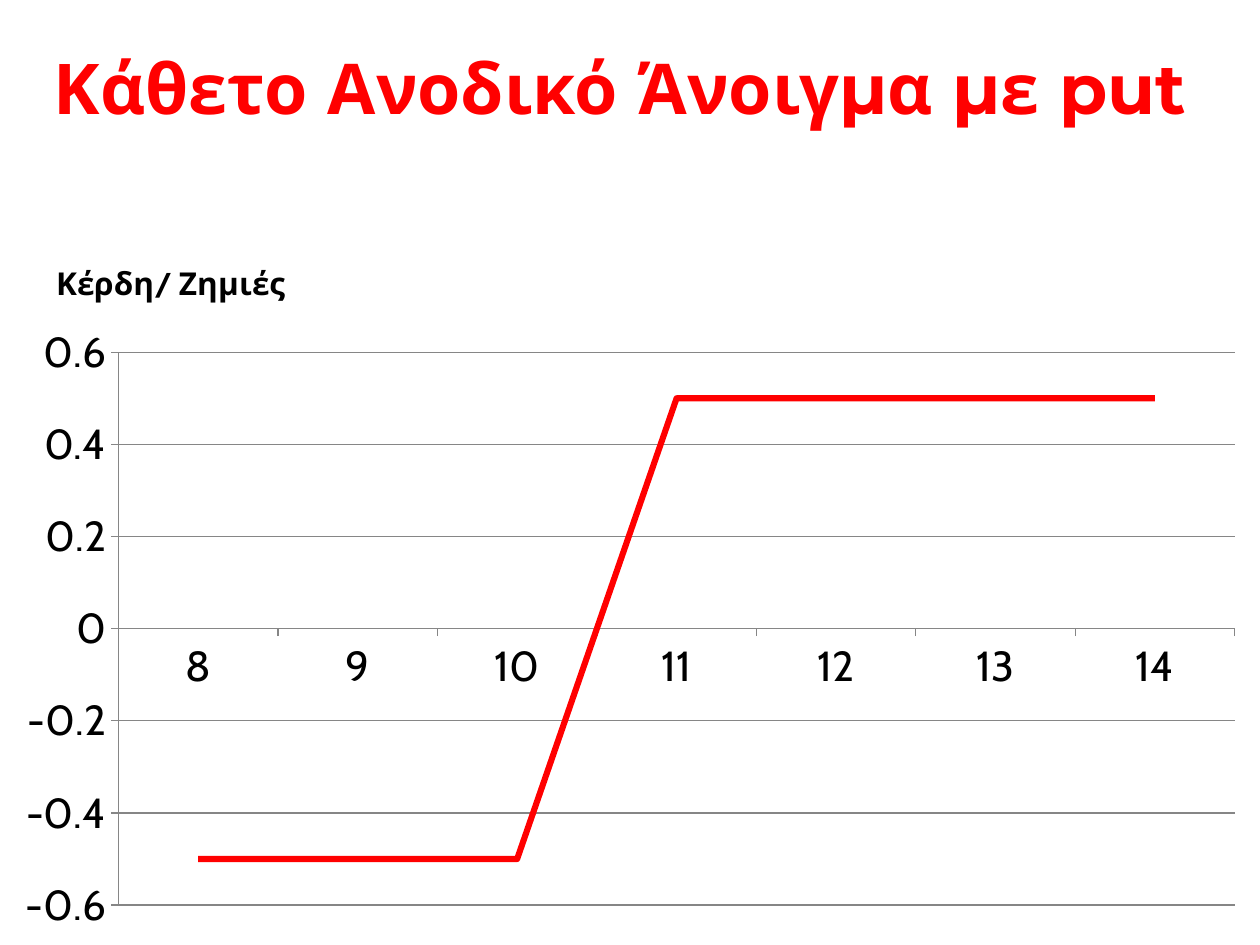
import pptx
import pptx.util
import pptx.chart.data
import pptx.dml.color
import pptx.enum.chart
import pptx.enum.text
import pptx.oxml

Inches = pptx.util.Inches
Pt = pptx.util.Pt

TITLE = "Κάθετο Ανοδικό Άνοιγμα με put "
SERIES_NAME = "Κέρδη/ Ζημιές"
PRICES = ["8", "9", "10", "11", "12", "13", "14"]
PROFITS = [-0.5, -0.5, -0.5, 0.5, 0.5, 0.5, 0.5]
COLORS = {"red": "FF0000", "black": "000000", "grid": "868686"}
TITLE_LAYOUT = {"x": 0.04, "y": 0.03}
PLOT_LAYOUT = {"x": 0.094, "y": 0.166, "w": 0.886, "h": 0.778}


def color(name):
    return pptx.dml.color.RGBColor.from_string(COLORS[name])


def format_font(font, size, name, fill="black", bold=False):
    font.size = Pt(size)
    font.name = name
    font.bold = bold
    font.color.rgb = color(fill)


def write_text(frame, text, align=None, **style):
    paragraph = frame.paragraphs[0]
    paragraph.alignment = align
    run = paragraph.add_run()
    run.text = text
    format_font(run.font, **style)


def format_line(line, fill, width):
    line.color.rgb = color(fill)
    line.width = Pt(width)


def place(element, positions, index, target=""):
    for child in element.findall(pptx.oxml.ns.qn("c:layout")):
        element.remove(child)
    modes = "".join(f'<c:{key}Mode val="edge"/>' for key in "xy")
    values = "".join(f'<c:{key} val="{value}"/>' for key, value in positions.items())
    element.insert(index, pptx.oxml.parse_xml(
        '<c:layout xmlns:c="http://schemas.openxmlformats.org/drawingml/2006/chart">'
        f"<c:manualLayout>{target}{modes}{values}</c:manualLayout></c:layout>"
    ))


def add_title(slide):
    title = slide.shapes.title
    title.left, title.top = Inches(0), Inches(0)
    title.width, title.height = Inches(10), Inches(1.07)
    frame = title.text_frame
    frame.word_wrap = True
    frame.vertical_anchor = pptx.enum.text.MSO_ANCHOR.BOTTOM
    write_text(frame, TITLE, align=pptx.enum.text.PP_ALIGN.CENTER,
               size=40, name="Montserrat", fill="red", bold=True)


def add_profit_chart(slide):
    data = pptx.chart.data.CategoryChartData()
    data.categories = PRICES
    data.add_series(SERIES_NAME, PROFITS)
    chart = slide.shapes.add_chart(
        pptx.enum.chart.XL_CHART_TYPE.LINE,
        Inches(0), Inches(1.86), Inches(10), Inches(5.64), data).chart
    format_font(chart.font, 10, "Cabin")
    chart.has_legend = False
    chart.has_title = True
    write_text(chart.chart_title.text_frame, SERIES_NAME, size=18, name="Cabin", bold=True)

    plot = chart.plots[0]
    plot.vary_by_categories = False
    series = plot.series[0]
    series.smooth = False
    series.marker.style = pptx.enum.chart.XL_MARKER_STYLE.NONE
    format_line(series.format.line, "red", 3.5)

    for axis in (chart.category_axis, chart.value_axis):
        axis.major_tick_mark = pptx.enum.chart.XL_TICK_MARK.OUTSIDE
        axis.minor_tick_mark = pptx.enum.chart.XL_TICK_MARK.NONE
        format_font(axis.tick_labels.font, 24, "Cabin")
        format_line(axis.format.line, "grid", 0.75)
    chart.value_axis.has_major_gridlines = True
    format_line(chart.value_axis.major_gridlines.format.line, "grid", 0.75)

    chart_element = chart.element.find(pptx.oxml.ns.qn("c:chart"))
    place(chart_element.find(pptx.oxml.ns.qn("c:title")), TITLE_LAYOUT, 1)
    place(chart_element.find(pptx.oxml.ns.qn("c:plotArea")), PLOT_LAYOUT, 0,
          target='<c:layoutTarget val="inner"/>')


def main():
    presentation = pptx.Presentation()
    presentation.slide_width = Inches(10)
    presentation.slide_height = Inches(7.5)
    slide = presentation.slides.add_slide(presentation.slide_layouts[5])
    add_title(slide)
    add_profit_chart(slide)
    presentation.save("out.pptx")


if __name__ == "__main__":
    main()
